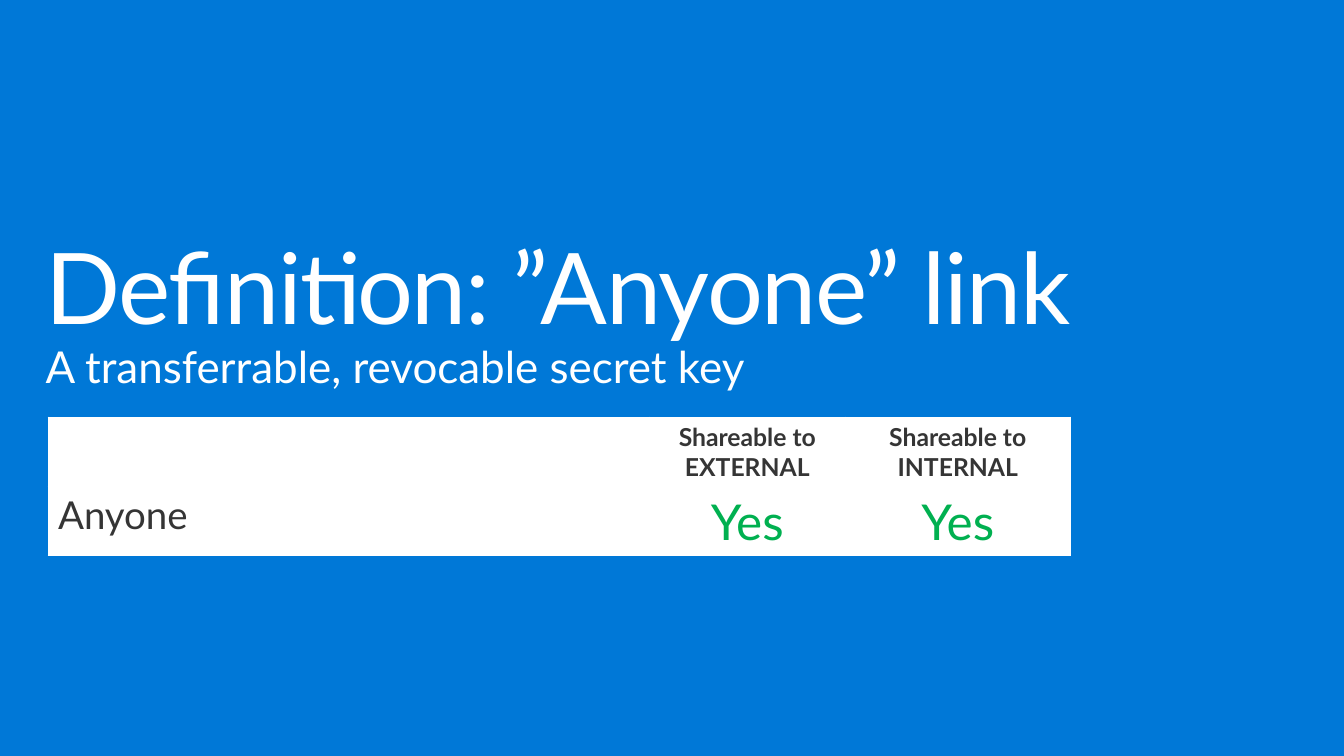
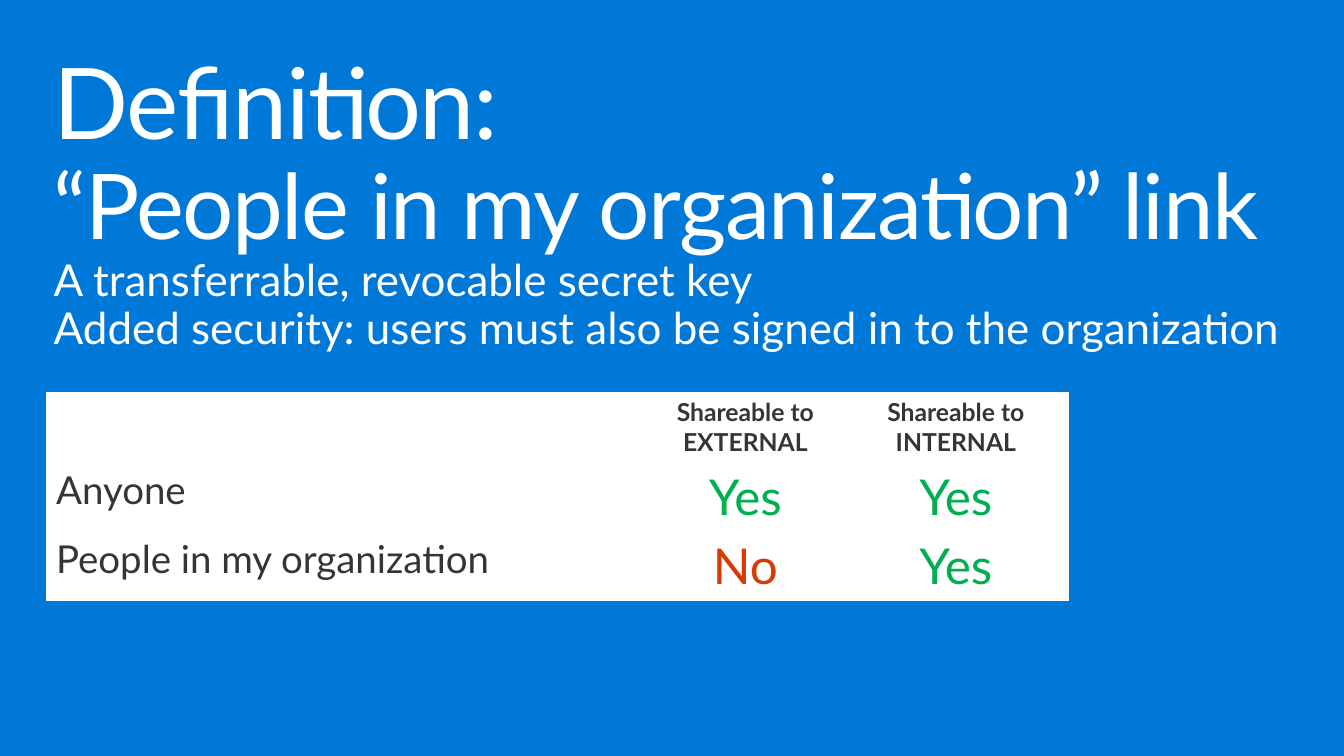
from copy import deepcopy
from dataclasses import dataclass

from pptx import Presentation
from pptx.dml.color import RGBColor
from pptx.enum.text import MSO_ANCHOR, MSO_AUTO_SIZE, PP_ALIGN
from pptx.oxml.ns import qn
from pptx.slide import Slide
from pptx.util import Cm, Pt


@dataclass(frozen=True)
class Theme:
    font: str = "Lato"
    background: RGBColor = RGBColor(0x00, 0x78, 0xD7)
    white: RGBColor = RGBColor(0xFF, 0xFF, 0xFF)
    dark: RGBColor = RGBColor(0x35, 0x35, 0x35)
    yes: RGBColor = RGBColor(0x00, 0xB0, 0x50)
    no: RGBColor = RGBColor(0xD8, 0x3B, 0x01)
    headline: int = 72
    long_headline: int = 66
    subtitle: int = 32
    header: int = 18
    label: int = 28
    answer: int = 36


THEME = Theme()
TITLE_ONLY = 5
COLUMN_WIDTHS = (Cm(15.44), Cm(5.05), Cm(5.77))
ROW_HEIGHT = Cm(1.78)
HEADER = ("", "Shareable to EXTERNAL", "Shareable to INTERNAL")
ANYONE = ("Anyone", "Yes", "Yes")
ORGANIZATION = ("People in my organization", "No", "Yes")


@dataclass(frozen=True)
class TitleLine:
    text: str
    size: int
    spacing: int = 0  # hundredths of a point


@dataclass(frozen=True)
class Definition:
    title_box: tuple[Cm, Cm, Cm, Cm]
    lines: tuple[TitleLine, ...]
    table_corner: tuple[Cm, Cm]
    rows: tuple[tuple[str, ...], ...]


SECRET_KEY = TitleLine("A transferrable, revocable secret key", THEME.subtitle)

DEFINITIONS = (
    Definition(
        (Cm(0.76), Cm(5.89), Cm(33.02), Cm(4.52)),
        (TitleLine("Definition: ”Anyone” link", THEME.headline, -100), SECRET_KEY),
        (Cm(1.24), Cm(10.72)),
        (HEADER, ANYONE),
    ),
    Definition(
        (Cm(0.97), Cm(1.14), Cm(33.02), Cm(8.28)),
        (
            TitleLine("Definition:", THEME.headline, -100),
            TitleLine("“People in my organization” link", THEME.long_headline, -100),
            SECRET_KEY,
            TitleLine(
                "Added security: users must also be signed in to the organization",
                THEME.subtitle,
            ),
        ),
        (Cm(1.19), Cm(10.08)),
        (HEADER, ANYONE, ORGANIZATION),
    ),
)


def format_span(span, size: int, color: RGBColor, bold: bool = False) -> None:
    span.font.name = THEME.font
    span.font.size = Pt(size)
    span.font.bold = bold
    span.font.color.rgb = color


def fill_title(slide: Slide, definition: Definition) -> None:
    box = slide.shapes.title
    box.left, box.top, box.width, box.height = definition.title_box
    frame = box.text_frame
    frame.word_wrap = True
    frame.auto_size = MSO_AUTO_SIZE.SHAPE_TO_FIT_TEXT
    frame.vertical_anchor = MSO_ANCHOR.TOP
    frame.margin_left = frame.margin_right = Cm(0.41)
    frame.margin_top = frame.margin_bottom = Cm(0.25)

    para = frame.paragraphs[0]
    para.text = "\v".join(line.text for line in definition.lines)
    para.alignment = PP_ALIGN.LEFT
    para.line_spacing = 0.9
    para.space_before = Pt(0)
    for span, line in zip(para.runs, definition.lines):
        format_span(span, line.size, THEME.white)
        span.font._element.set("spc", str(line.spacing))
    # A line break needs the size of its own line to keep the line height.
    for line_break, span in zip(para._p.findall(qn("a:br")), para.runs):
        line_break.append(deepcopy(span.font._element))


def fill_cell(cell, text: str, row: int, column: int) -> None:
    cell.fill.solid()
    cell.fill.fore_color.rgb = THEME.white
    cell.text_frame.text = text
    para = cell.text_frame.paragraphs[0]
    para.alignment = PP_ALIGN.CENTER if column else PP_ALIGN.LEFT
    if row == 0:
        cell.vertical_anchor = MSO_ANCHOR.BOTTOM
        size, color = THEME.header, THEME.dark
    elif column == 0:
        size, color = THEME.label, THEME.dark
    else:
        size, color = THEME.answer, THEME.yes if text == "Yes" else THEME.no
    for span in para.runs:
        format_span(span, size, color, bold=row == 0)


def add_sharing_table(slide: Slide, definition: Definition) -> None:
    rows = definition.rows
    table = slide.shapes.add_table(
        len(rows), len(COLUMN_WIDTHS), *definition.table_corner,
        sum(COLUMN_WIDTHS), ROW_HEIGHT * len(rows),
    ).table
    table.first_row = table.horz_banding = False
    for column, width in zip(table.columns, COLUMN_WIDTHS):
        column.width = width
    for row_index, texts in enumerate(rows):
        table.rows[row_index].height = ROW_HEIGHT
        for column_index, text in enumerate(texts):
            fill_cell(table.cell(row_index, column_index), text, row_index, column_index)


def main() -> None:
    deck = Presentation()
    deck.slide_width, deck.slide_height = Cm(34.54), Cm(19.43)
    background = deck.slide_master.background.fill
    background.solid()
    background.fore_color.rgb = THEME.background
    for definition in DEFINITIONS:
        page = deck.slides.add_slide(deck.slide_layouts[TITLE_ONLY])
        fill_title(page, definition)
        add_sharing_table(page, definition)
    deck.save("out.pptx")


if __name__ == "__main__":
    main()
